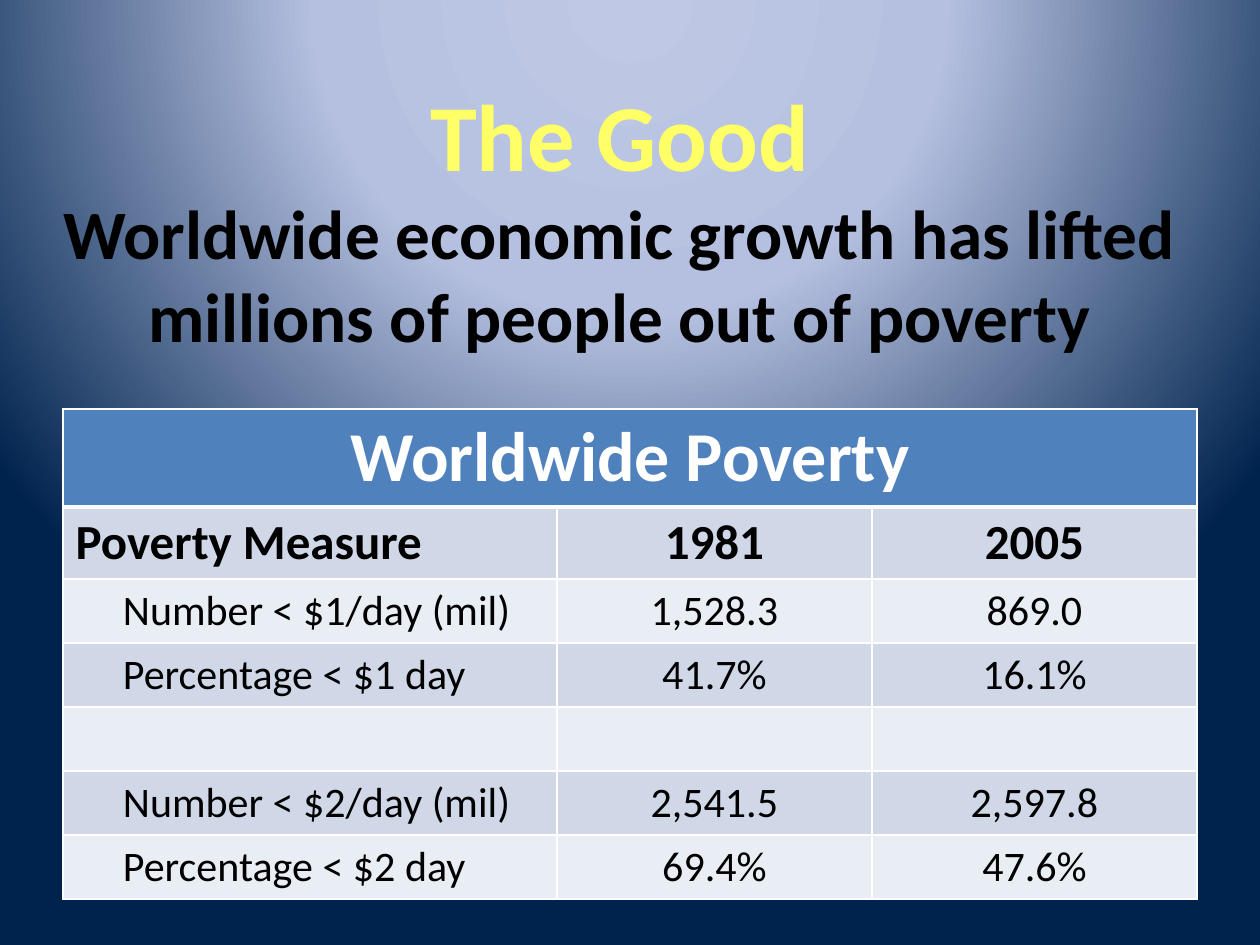
from pptx import Presentation
from pptx.dml.color import RGBColor
from pptx.enum.text import MSO_ANCHOR, PP_ALIGN
from pptx.oxml import parse_xml
from pptx.oxml.ns import nsdecls
from pptx.util import Emu, Pt

EMU_PER_PX = 914400 / 126
FONT = "Calibri"
BLACK, WHITE, YELLOW = "000000", "FFFFFF", "FFFF66"
HEADER_FILL = "4F81BD"
BAND_FILLS = ["E9EDF4", "D0D8E8"]
COLUMN_WIDTHS = [494, 315, 325]
ROW_HEIGHTS = [98, 72] + [64] * 5
POVERTY_ROWS = [
    ["Worldwide Poverty", "", ""],
    ["Poverty Measure", "1981", "2005"],
    ["Number < $1/day (mil)", "1,528.3", "869.0"],
    ["Percentage < $1 day", "41.7%", "16.1%"],
    ["", "", ""],
    ["Number < $2/day (mil)", "2,541.5", "2,597.8"],
    ["Percentage < $2 day", "69.4%", "47.6%"],
]


def px(length):
    return Emu(round(length * EMU_PER_PX))


def color(hex_code):
    return RGBColor.from_string(hex_code)


def format_font(font, size, hex_code, bold):
    font.name = FONT
    font.size = Pt(size)
    font.bold = bold
    font.color.rgb = color(hex_code)


def set_background(page):
    """Radial gradient centred above the top edge."""
    stops = [(0, "BFC9E5"), (40, "B5C0E0"), (100, "00234D")]
    stop_xml = "".join(
        f'<a:gs pos="{position * 1000}"><a:srgbClr val="{hex_code}"/></a:gs>'
        for position, hex_code in stops
    )
    background = parse_xml(
        f'<p:bg {nsdecls("p", "a")}><p:bgPr><a:gradFill rotWithShape="1">'
        f"<a:gsLst>{stop_xml}</a:gsLst>"
        '<a:path path="circle">'
        '<a:fillToRect l="50000" t="-80000" r="50000" b="180000"/></a:path>'
        "</a:gradFill><a:effectLst/></p:bgPr></p:bg>"
    )
    page._element.cSld.insert(0, background)


def add_title(page):
    box = page.shapes.add_textbox(px(42), px(38), px(1155), px(357))
    frame = box.text_frame
    frame.word_wrap = True
    frame.vertical_anchor = MSO_ANCHOR.MIDDLE
    para = frame.paragraphs[0]
    para.text = (
        "The Good\v"
        "Worldwide economic growth has lifted millions of people out of poverty"
    )
    para.alignment = PP_ALIGN.CENTER
    heading, message = para.runs
    format_font(heading.font, 54, YELLOW, True)
    format_font(message.font, 39.6, BLACK, True)


def set_borders(cell, row_index):
    widths = {
        "L": 1,
        "R": 1,
        "T": 3 if row_index == 1 else 1,
        "B": 3 if row_index == 0 else 1,
    }
    properties = cell._tc.get_or_add_tcPr()
    for side, width in widths.items():
        properties.append(parse_xml(
            f'<a:ln{side} {nsdecls("a")} w="{Pt(width)}"><a:solidFill>'
            f'<a:srgbClr val="{WHITE}"/></a:solidFill></a:ln{side}>'
        ))


def fill_cell(cell, text, row_index, column_index):
    set_borders(cell, row_index)
    cell.fill.solid()
    cell.fill.fore_color.rgb = color(
        BAND_FILLS[row_index % 2] if row_index else HEADER_FILL
    )
    if not text:
        return
    cell.text = text
    para = cell.text_frame.paragraphs[0]
    if row_index == 0 or column_index > 0:
        para.alignment = PP_ALIGN.CENTER
    elif row_index > 1:
        cell.margin_left = px(60)
    size = {0: 40, 1: 28}.get(row_index, 24)
    text_color = BLACK if row_index else WHITE
    format_font(para.runs[0].font, size, text_color, row_index < 2)


def add_poverty_table(page):
    table = page.shapes.add_table(
        len(ROW_HEIGHTS), len(COLUMN_WIDTHS), px(63), px(409),
        px(sum(COLUMN_WIDTHS)), px(sum(ROW_HEIGHTS)),
    ).table
    for column, width in zip(table.columns, COLUMN_WIDTHS):
        column.width = px(width)
    for row, height in zip(table.rows, ROW_HEIGHTS):
        row.height = px(height)
    for row_index, values in enumerate(POVERTY_ROWS):
        for column_index, text in enumerate(values):
            cell = table.cell(row_index, column_index)
            fill_cell(cell, text, row_index, column_index)
    table.cell(0, 0).merge(table.cell(0, len(COLUMN_WIDTHS) - 1))


def main():
    deck = Presentation()
    deck.slide_width, deck.slide_height = px(1260), px(945)
    page = deck.slides.add_slide(deck.slide_layouts[6])
    set_background(page)
    add_title(page)
    add_poverty_table(page)
    deck.save("out.pptx")


if __name__ == "__main__":
    main()
